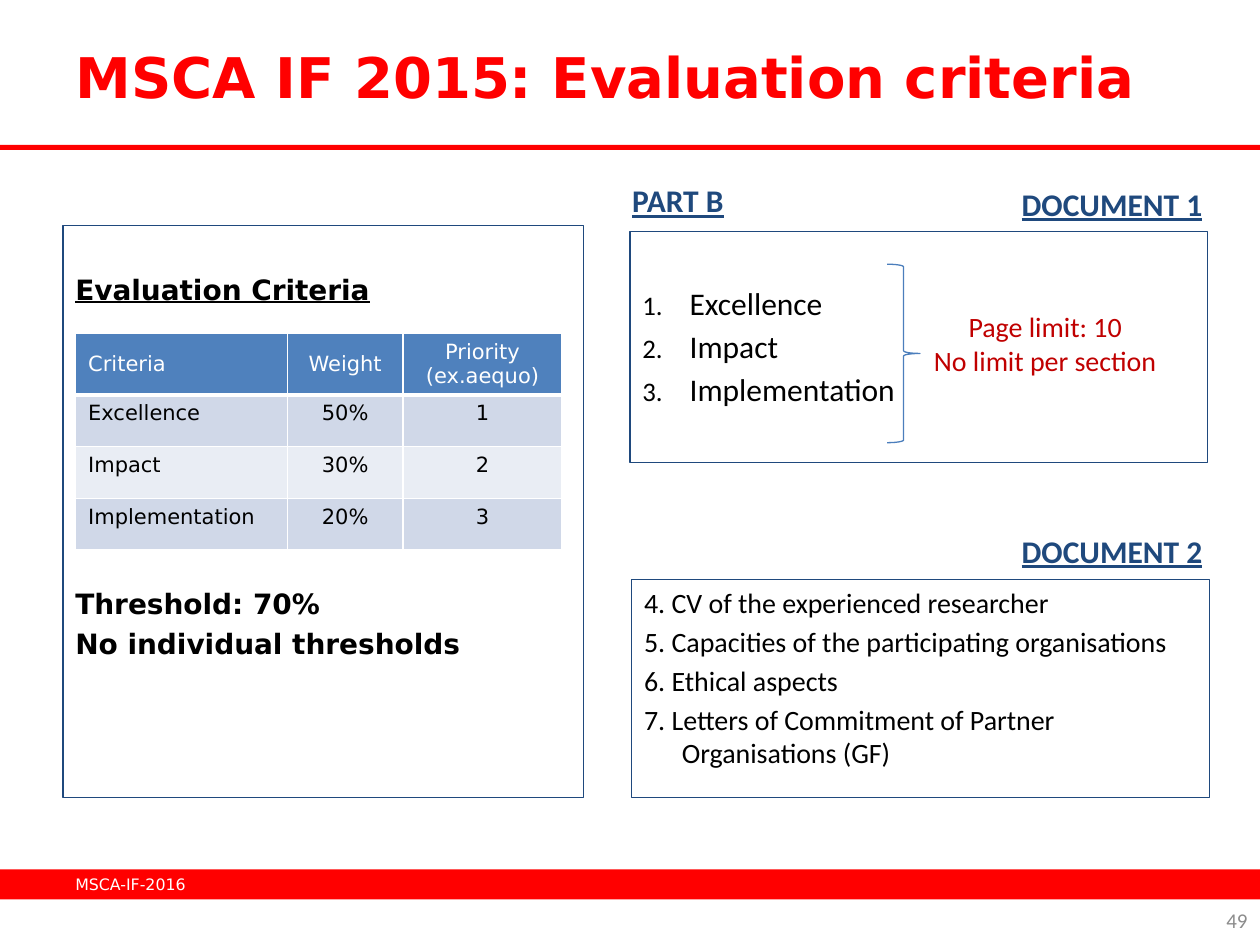
from dataclasses import dataclass

from lxml import etree
from pptx import Presentation
from pptx.dml.color import RGBColor
from pptx.enum.shapes import MSO_SHAPE
from pptx.enum.text import MSO_ANCHOR, PP_ALIGN
from pptx.oxml.ns import qn
from pptx.util import Pt

LEFT, CENTER, RIGHT = PP_ALIGN.LEFT, PP_ALIGN.CENTER, PP_ALIGN.RIGHT
TOP, MIDDLE = MSO_ANCHOR.TOP, MSO_ANCHOR.MIDDLE
RECTANGLE, RIGHT_BRACE = MSO_SHAPE.RECTANGLE, MSO_SHAPE.RIGHT_BRACE


@dataclass(frozen=True)
class Theme:
    sans: str = "DejaVu Sans"
    body: str = "Calibri"
    red: str = "FF0000"
    dark_red: str = "C00000"
    navy: str = "1F497D"
    brace: str = "4B7EBC"
    header: str = "4F81BD"
    band_dark: str = "D0D8E8"
    band_light: str = "E9EDF4"
    black: str = "000000"
    white: str = "FFFFFF"
    grey: str = "8C8C8C"
    title_size: float = 32
    large: float = 18
    medium: float = 16
    small: float = 12
    footer: float = 9
    outline: float = 0.75


def rgb(value):
    return RGBColor.from_string(value)


class SlideBuilder:
    def __init__(self, slide, theme):
        self.slide = slide
        self.theme = theme

    def style(self, frame, lines, size, color, font=None, bold=False,
              underline=False, align=LEFT, gap=0):
        """Write the lines as paragraphs, with a gap between them."""
        frame.text = "\n".join(lines)
        for index, paragraph in enumerate(frame.paragraphs):
            paragraph.alignment = align
            paragraph.space_before = Pt(gap if index else 0)
            for run in paragraph.runs:
                run.font.name = font or self.theme.body
                run.font.size = Pt(size)
                run.font.bold = bold
                run.font.underline = underline
                run.font.color.rgb = rgb(color)

    def title(self, text, box):
        title = self.slide.shapes.title
        title.left, title.top, title.width, title.height = map(Pt, box)
        title.text_frame.vertical_anchor = MIDDLE
        self.style(title.text_frame, [text], self.theme.title_size,
                   self.theme.red, self.theme.sans, bold=True)

    def shape(self, kind, box, fill=None, line=None):
        shape = self.slide.shapes.add_shape(kind, *map(Pt, box))
        shape.shadow.inherit = False
        if fill:
            shape.fill.solid()
            shape.fill.fore_color.rgb = rgb(fill)
        else:
            shape.fill.background()
        if line:
            shape.line.color.rgb = rgb(line)
            shape.line.width = Pt(self.theme.outline)
        else:
            shape.line.fill.background()
        return shape

    def panel(self, box, lines, size, top_inset=3.6, **style):
        """Outlined box with text from the top."""
        frame = self.shape(RECTANGLE, box, line=self.theme.navy).text_frame
        frame.word_wrap = True
        frame.vertical_anchor = TOP
        frame.margin_top = Pt(top_inset)
        self.style(frame, lines, size, self.theme.black, **style)
        return frame.paragraphs

    def text(self, box, lines, size, color, wrap=False, anchor=TOP, **style):
        frame = self.slide.shapes.add_textbox(*map(Pt, box)).text_frame
        frame.word_wrap = wrap
        frame.vertical_anchor = anchor
        self.style(frame, lines, size, color, **style)

    def hang(self, paragraphs, indent, numbered=False):
        for paragraph in paragraphs:
            properties = paragraph._p.get_or_add_pPr()
            properties.set("marL", str(Pt(indent)))
            properties.set("indent", str(-Pt(indent)))
            if numbered:
                etree.SubElement(properties, qn("a:buSzPct"), val="85000")
                etree.SubElement(properties, qn("a:buAutoNum"), type="arabicPeriod")

    def borders(self, cell, bottom):
        properties = cell._tc.get_or_add_tcPr()
        widths = {"a:lnL": 1, "a:lnR": 1, "a:lnT": 1, "a:lnB": bottom}
        for position, (tag, width) in enumerate(widths.items()):
            line = etree.Element(qn(tag), w=str(Pt(width)))
            fill = etree.SubElement(line, qn("a:solidFill"))
            etree.SubElement(fill, qn("a:srgbClr"), val=self.theme.white)
            properties.insert(position, line)

    def table(self, left, top, widths, heights, rows):
        theme = self.theme
        table = self.slide.shapes.add_table(
            len(rows), len(widths), Pt(left), Pt(top),
            Pt(sum(widths)), Pt(sum(heights))).table
        for column, width in zip(table.columns, widths):
            column.width = Pt(width)
        for r, (values, height) in enumerate(zip(rows, heights)):
            table.rows[r].height = Pt(height)
            is_header = r == 0
            band = theme.band_dark if r % 2 else theme.band_light
            for c, value in enumerate(values):
                cell = table.cell(r, c)
                cell.vertical_anchor = MIDDLE if is_header else TOP
                cell.fill.solid()
                cell.fill.fore_color.rgb = rgb(theme.header if is_header else band)
                self.borders(cell, 3 if is_header else 1)
                self.style(cell.text_frame, [value], theme.small,
                           theme.white if is_header else theme.black,
                           theme.sans, align=CENTER if c else LEFT)


def main():
    theme = Theme()
    presentation = Presentation()
    presentation.slide_width, presentation.slide_height = Pt(720), Pt(540)
    slide = presentation.slides.add_slide(presentation.slide_layouts[5])
    build = SlideBuilder(slide, theme)

    # Title and red bands
    build.title("MSCA IF 2015: Evaluation criteria", (36, 9.4, 648, 67.7))
    build.shape(RECTANGLE, (0, 496.8, 720, 17.2), fill=theme.red)
    build.shape(RECTANGLE, (0, 82.8, 720, 2.8), fill=theme.red)

    # Evaluation criteria panel, with room for the table
    heading, threshold, _ = build.panel(
        (36, 128.9, 297.4, 326.9),
        ["Evaluation Criteria", "Threshold: 70%", "No individual thresholds"],
        theme.medium, top_inset=27, font=theme.sans, bold=True, gap=3.7)
    heading.runs[0].font.underline = True
    threshold.space_before = Pt(160)
    build.table(43.2, 190.4, [121, 66.2, 90.7], [35] + [29.5] * 3, [
        ("Criteria", "Weight", "Priority (ex.aequo)"),
        ("Excellence", "50%", "1"),
        ("Impact", "30%", "2"),
        ("Implementation", "20%", "3"),
    ])

    # Document 1: sections and page limit
    sections = build.panel((360, 132.3, 330, 132),
                           ["Excellence", "Impact", "Implementation"],
                           theme.large, top_inset=29.7, gap=3.2)
    build.hang(sections, 27, numbered=True)
    build.text((525.6, 173.5, 143.3, 46), ["Page limit: 10", "No limit per section"],
               theme.medium, theme.dark_red, align=CENTER)
    brace = build.shape(RIGHT_BRACE, (507, 151, 18.7, 102), line=theme.brace)
    brace.adjustments[0] = 0.08

    # Document 2: remaining sections
    attachments = build.panel((361, 331.2, 330, 124.6), [
        "4. CV of the experienced researcher",
        "5. Capacities of the participating organisations",
        "6. Ethical aspects",
        "7. Letters of Commitment of Partner Organisations (GF)",
    ], theme.medium, gap=3)
    build.hang(attachments, 21.6)

    # Document labels
    for label, left, top, width in [("PART B", 354.2, 100.1, 67.7),
                                    ("DOCUMENT 2", 576.7, 300.5, 118.8),
                                    ("DOCUMENT 1", 576.7, 102.2, 118.8)]:
        build.text((left, top, width, 29), [label], theme.large, theme.navy,
                   bold=True, underline=True)

    # Footer and page number
    build.text((36, 491, 168, 28.8), ["MSCA-IF-2016"], theme.footer, theme.white,
               wrap=True, anchor=MIDDLE, font=theme.sans)
    build.text((552, 511.2, 168, 28.8), ["49"], theme.small, theme.grey,
               wrap=True, anchor=MIDDLE, align=RIGHT)

    presentation.save("out.pptx")


if __name__ == "__main__":
    main()
